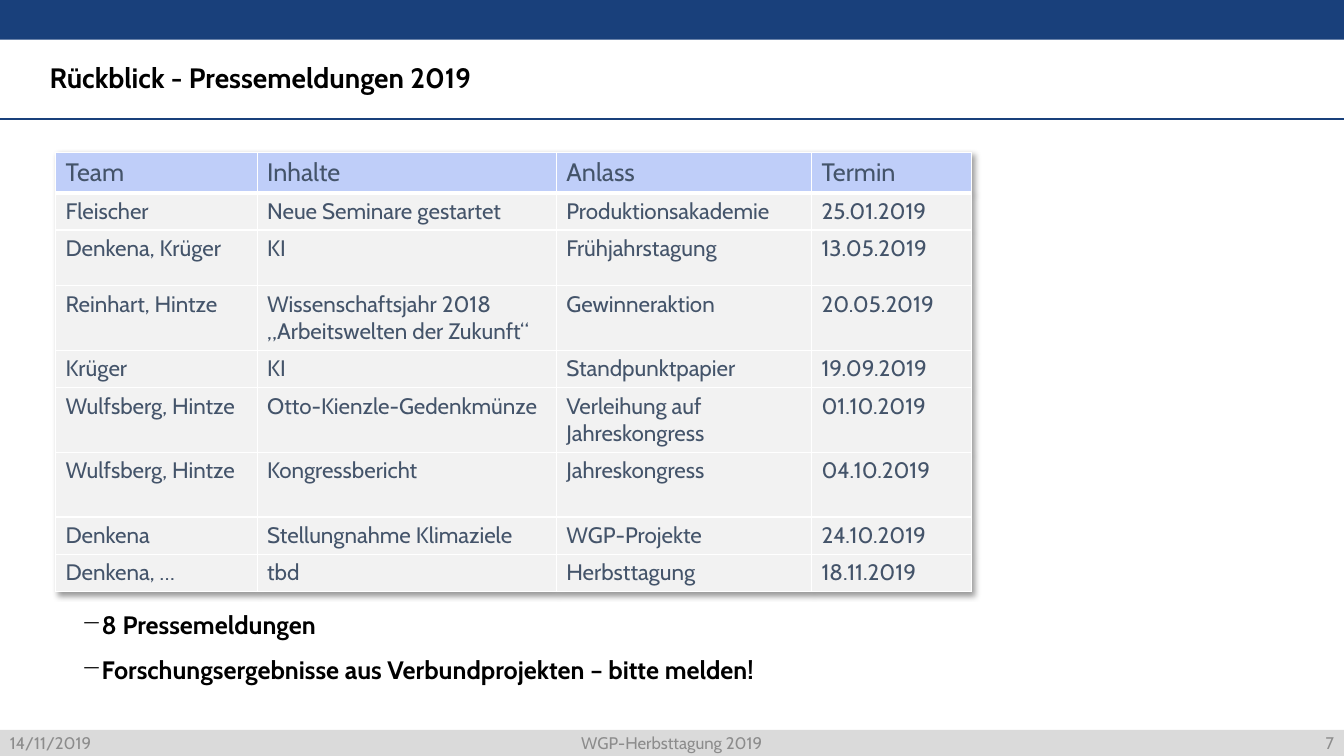
from lxml import etree
from pptx import Presentation, util as u
from pptx.dml.color import RGBColor
from pptx.enum import shapes, text
from pptx.oxml import ns, parse_xml

NS = ns.nsdecls("a")
LEFT, MID, RIGHT = text.PP_ALIGN.LEFT, text.PP_ALIGN.CENTER, text.PP_ALIGN.RIGHT
WIDE, HIGH = 33.87, 19.05


def hue(code):
    return RGBColor.from_string(code)


def style(para, words, size, code, bold=False):
    para.text = words
    look = {"name": "Cabin", "size": u.Pt(size), "bold": bold}
    for key, value in look.items():
        setattr(para.font, key, value)
    para.font.color.rgb = hue(code)


deck = Presentation()
deck.slide_width, deck.slide_height = u.Cm(WIDE), u.Cm(HIGH)
slide = deck.slides.add_slide(deck.slide_layouts[6])

for top, high, code in [(0, 1, "19407B"), (18.39, 0.66, "DADADA")]:
    bar = slide.shapes.add_shape(shapes.MSO_SHAPE.RECTANGLE, 0, u.Cm(top), u.Cm(WIDE), u.Cm(high))
    bar.shadow.inherit = False
    bar.fill.solid()
    bar.fill.fore_color.rgb = hue(code)
    bar.line.fill.background()

rule = slide.shapes.add_connector(shapes.MSO_CONNECTOR.STRAIGHT, 0, u.Cm(3), u.Cm(WIDE), u.Cm(3))
rule.line.color.rgb = hue("19407B")
rule.line.width = u.Pt(1.5)
etree.SubElement(rule._element.spPr, ns.qn("a:effectLst"))

labels = [
    ("Rückblick - Pressemeldungen 2019", 1, 1.02, 25.93, 1.98, 20, "000000", True, LEFT),
    ("14/11/2019", 0, 18.39, 7.62, 0.66, 12, "8C8C8C", False, LEFT),
    ("WGP-Herbsttagung 2019", 7.62, 18.39, 18.62, 0.66, 12, "8C8C8C", False, MID),
    ("7", 26.25, 18.39, 7.62, 0.66, 12, "8C8C8C", False, RIGHT),
]
for words, left, top, wide, high, size, code, bold, side in labels:
    frame = slide.shapes.add_textbox(u.Cm(left), u.Cm(top), u.Cm(wide), u.Cm(high)).text_frame
    frame.word_wrap = True
    frame.vertical_anchor = text.MSO_ANCHOR.MIDDLE
    para = frame.paragraphs[0]
    style(para, words, size, code, bold)
    para.alignment = side

points = ["8 Pressemeldungen", "Forschungsergebnisse aus Verbundprojekten – bitte melden!"]
frame = slide.shapes.add_textbox(u.Cm(0.48), u.Cm(15.24), u.Cm(31.88), u.Cm(3.12)).text_frame
frame.word_wrap = True
for i, words in enumerate(points):
    para = frame.add_paragraph() if i else frame.paragraphs[0]
    props = para._p.get_or_add_pPr()
    props.set("marL", str(u.Cm(0.64)))
    props.set("indent", str(u.Cm(0.69)))
    props.append(parse_xml(f'<a:buChar {NS} char="−"/>'))
    style(para, words, 18, "000000", True)
    if i:
        para.space_before = u.Pt(10)

rows = [
    ("Team", "Inhalte", "Anlass", "Termin"),
    ("Fleischer", "Neue Seminare gestartet", "Produktionsakademie", "25.01.2019"),
    ("Denkena, Krüger", "KI", "Frühjahrstagung", "13.05.2019"),
    ("Reinhart, Hintze", "Wissenschaftsjahr 2018 „Arbeitswelten der Zukunft“", "Gewinneraktion", "20.05.2019"),
    ("Krüger", "KI", "Standpunktpapier", "19.09.2019"),
    ("Wulfsberg, Hintze", "Otto-Kienzle-Gedenkmünze", "Verleihung auf Jahreskongress", "01.10.2019"),
    ("Wulfsberg, Hintze", "Kongressbericht", "Jahreskongress", "04.10.2019"),
    ("Denkena", "Stellungnahme Klimaziele", "WGP-Projekte", "24.10.2019"),
    ("Denkena, …", "tbd", "Herbsttagung", "18.11.2019"),
]
widths = [5.08, 7.54, 6.43, 4.04]
heights = [0.99, 0.94, 1.4, 1.63, 0.94, 1.63, 1.63, 0.94, 0.94]
grid = slide.shapes.add_table(
    len(rows), len(widths), u.Cm(1.4), u.Cm(3.84), u.Cm(sum(widths)), u.Cm(sum(heights))
).table
grid.horz_banding = grid.first_row = False
grid._tbl.tblPr.insert(0, parse_xml(
    f'<a:effectLst {NS}><a:outerShdw blurRad="50800" dist="38100" dir="2700000" algn="tl">'
    '<a:srgbClr val="000000"><a:alpha val="40000"/></a:srgbClr></a:outerShdw></a:effectLst>'))
for col, wide in zip(grid.columns, widths):
    col.width = u.Cm(wide)

for i, row in enumerate(rows):
    grid.rows[i].height = u.Cm(heights[i])
    for j, words in enumerate(row):
        cell = grid.cell(i, j)
        style(cell.text_frame.paragraphs[0], words, 16 if i else 18, "44546A")
        cell.fill.solid()
        cell.fill.fore_color.rgb = hue("F2F2F2" if i else "BFCEF9")
        edges = {"L": 1, "R": 1, "T": 3 if i == 1 else 1, "B": 1 if i else 3}
        for k, (edge, thick) in enumerate(edges.items()):
            cell._tc.tcPr.insert(k, parse_xml(
                f'<a:ln{edge} {NS} w="{u.Pt(thick)}"><a:solidFill>'
                f'<a:srgbClr val="FFFFFF"/></a:solidFill></a:ln{edge}>'))

for para in slide.shapes[3].text_frame.paragraphs:
    para.line_spacing = 0.9

deck.save("out.pptx")
